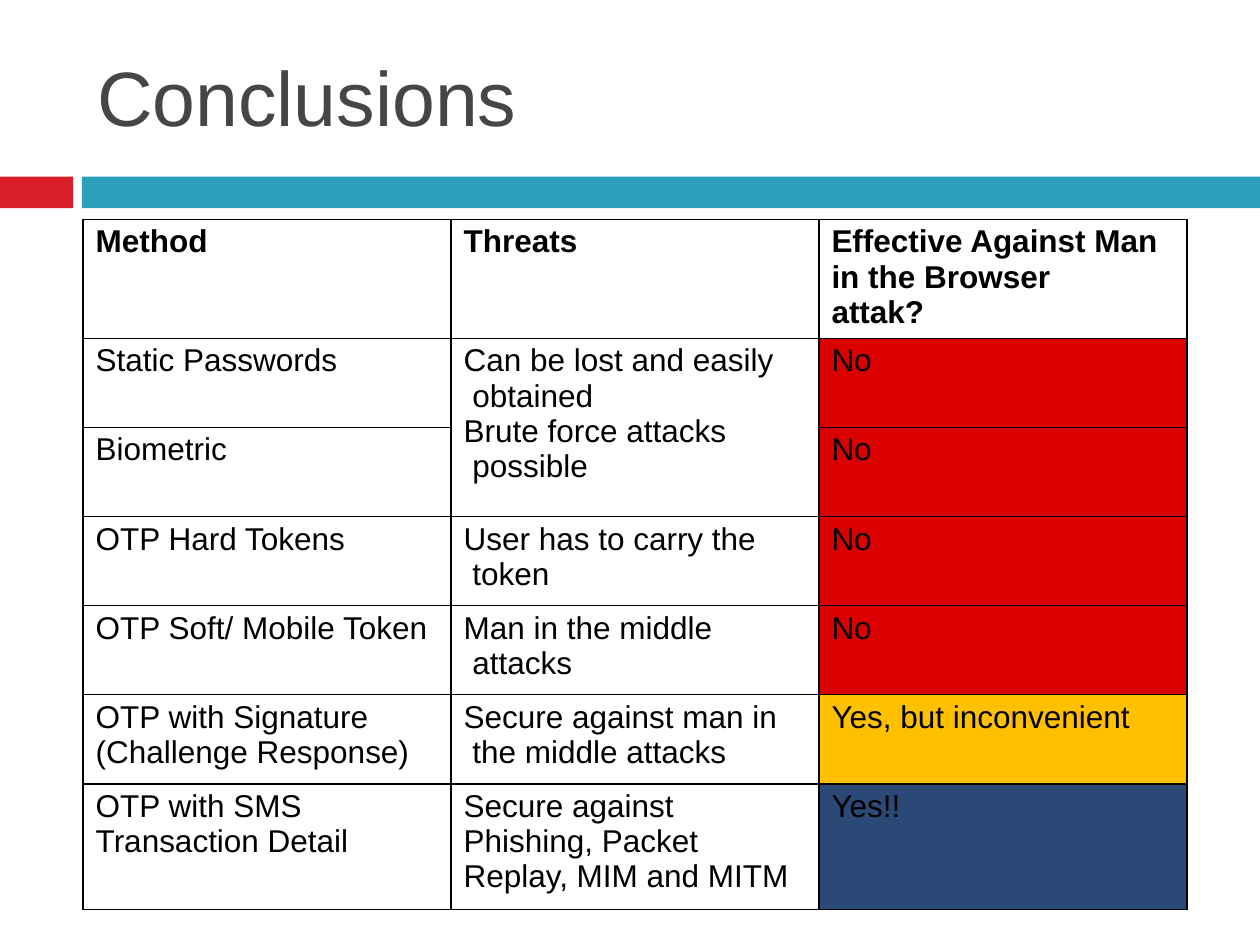
import lxml.etree
import pptx
import pptx.dml.color
import pptx.enum.shapes
import pptx.enum.text
import pptx.oxml.ns
import pptx.util

HUES = {
    "red": "DA1F28", "teal": "2CA1BE", "gray": "464646", "black": "000000",
    "white": "FFFFFF", "no": "DA0000", "maybe": "FFC000", "yes": "2B4976",
}
FONT = "Arial"

# A line break (\v) stays in its paragraph; a new line (\n) starts another
HEAD = ["Method", "Threats", "Effective Against Man\vin the Browser\vattak?"]
ROWS = [
    ("Static Passwords",
     "Can be lost and easily\vobtained\nBrute force attacks\vpossible",
     "No", "no"),
    ("Biometric", "", "No", "no"),
    ("OTP Hard Tokens", "User has to carry the\vtoken", "No", "no"),
    ("OTP Soft/ Mobile Token", "Man in the middle\vattacks", "No", "no"),
    ("OTP with Signature\v(Challenge Response)",
     "Secure against man in\vthe middle attacks",
     "Yes, but inconvenient", "maybe"),
    ("OTP with SMS\nTransaction Detail",
     "Secure against\vPhishing, Packet\vReplay, MIM and MITM",
     "Yes!!", "yes"),
]


def color(name):
    return pptx.dml.color.RGBColor.from_string(HUES[name])


def write(frame, text, size=18, hue="black", bold=False, hang=0):
    """Fill a text frame; hang insets the lines after each first one."""
    for i, line in enumerate(text.split("\n")):
        para = frame.add_paragraph() if i else frame.paragraphs[0]
        para.text = line
        para.alignment = pptx.enum.text.PP_ALIGN.LEFT
        if hang:
            inset = int(pptx.util.Inches(hang))
            props = para._p.get_or_add_pPr()
            props.set("marL", str(inset))
            props.set("indent", str(-inset))
        for run in para.runs:
            run.font.name = FONT
            run.font.size = pptx.util.Pt(size)
            run.font.bold = bold
            run.font.color.rgb = color(hue)


def edge(cell, width=1):
    """Draw thin black borders on all sides of a cell."""
    props = cell._tc.get_or_add_tcPr()
    name = pptx.oxml.ns.qn
    for i, side in enumerate(("a:lnL", "a:lnR", "a:lnT", "a:lnB")):
        line = lxml.etree.Element(name(side), w=str(pptx.util.Pt(width)))
        fill = lxml.etree.SubElement(line, name("a:solidFill"))
        lxml.etree.SubElement(fill, name("a:srgbClr"), val=HUES["black"])
        props.insert(i, line)


class Deck:
    """Holds the file and its slide; lengths are percent of the slide."""

    def __init__(self):
        self.file = pptx.Presentation()
        self.file.slide_width = pptx.util.Inches(10)
        self.file.slide_height = pptx.util.Inches(7.5)
        self.slide = self.file.slides.add_slide(self.file.slide_layouts[5])

    def wide(self, share):
        return int(self.file.slide_width * share / 100)

    def high(self, share):
        return int(self.file.slide_height * share / 100)

    def box(self, x, y, w, h):
        return self.wide(x), self.high(y), self.wide(w), self.high(h)

    def title(self, text, *place):
        item = self.slide.shapes.title
        item.left, item.top, item.width, item.height = self.box(*place)
        frame = item.text_frame
        frame.margin_left = frame.margin_right = 0
        frame.margin_top = frame.margin_bottom = 0
        frame.vertical_anchor = pptx.enum.text.MSO_ANCHOR.TOP
        write(frame, text, size=44, hue="gray")

    def bar(self, hue, *place):
        kind = pptx.enum.shapes.MSO_SHAPE.RECTANGLE
        item = self.slide.shapes.add_shape(kind, *self.box(*place))
        item.shadow.inherit = False
        item.fill.solid()
        item.fill.fore_color.rgb = color(hue)
        item.line.fill.background()

    def cell(self, cell, text, fill="white", **style):
        cell.margin_left = pptx.util.Inches(0.1)
        cell.margin_right = cell.margin_bottom = 0
        cell.margin_top = pptx.util.Inches(0.04)
        cell.fill.solid()
        cell.fill.fore_color.rgb = color(fill)
        edge(cell)
        write(cell.text_frame, text, **style)

    def table(self, x, y, wide, tall):
        place = self.box(x, y, wide * len(HEAD), sum(tall))
        grid = self.slide.shapes.add_table(len(tall), len(HEAD), *place).table
        grid.first_row = grid.horz_banding = False
        for col in grid.columns:
            col.width = self.wide(wide)
        for row, share in zip(grid.rows, tall):
            row.height = self.high(share)
        for c, text in enumerate(HEAD):
            self.cell(grid.cell(0, c), text, bold=True)
        for r, (way, threat, works, fill) in enumerate(ROWS, 1):
            self.cell(grid.cell(r, 0), way)
            hang = 0.07 if r < len(ROWS) else 0
            self.cell(grid.cell(r, 1), threat, hang=hang)
            self.cell(grid.cell(r, 2), works, fill=fill)
        # The first two methods share their threats
        grid.cell(1, 1).merge(grid.cell(2, 1))


def main():
    deck = Deck()
    # Title and the band under it
    deck.title("Conclusions", 7.7, 5.2, 60, 10.2)
    deck.bar("red", 0, 18.7, 5.8, 3.33)
    deck.bar("teal", 6.5, 18.7, 93.5, 3.33)
    # Comparison table
    deck.table(6.6, 23.2, 29.2, [12.6] + [9.43] * 5 + [13.33])
    deck.file.save("out.pptx")


if __name__ == "__main__":
    main()
